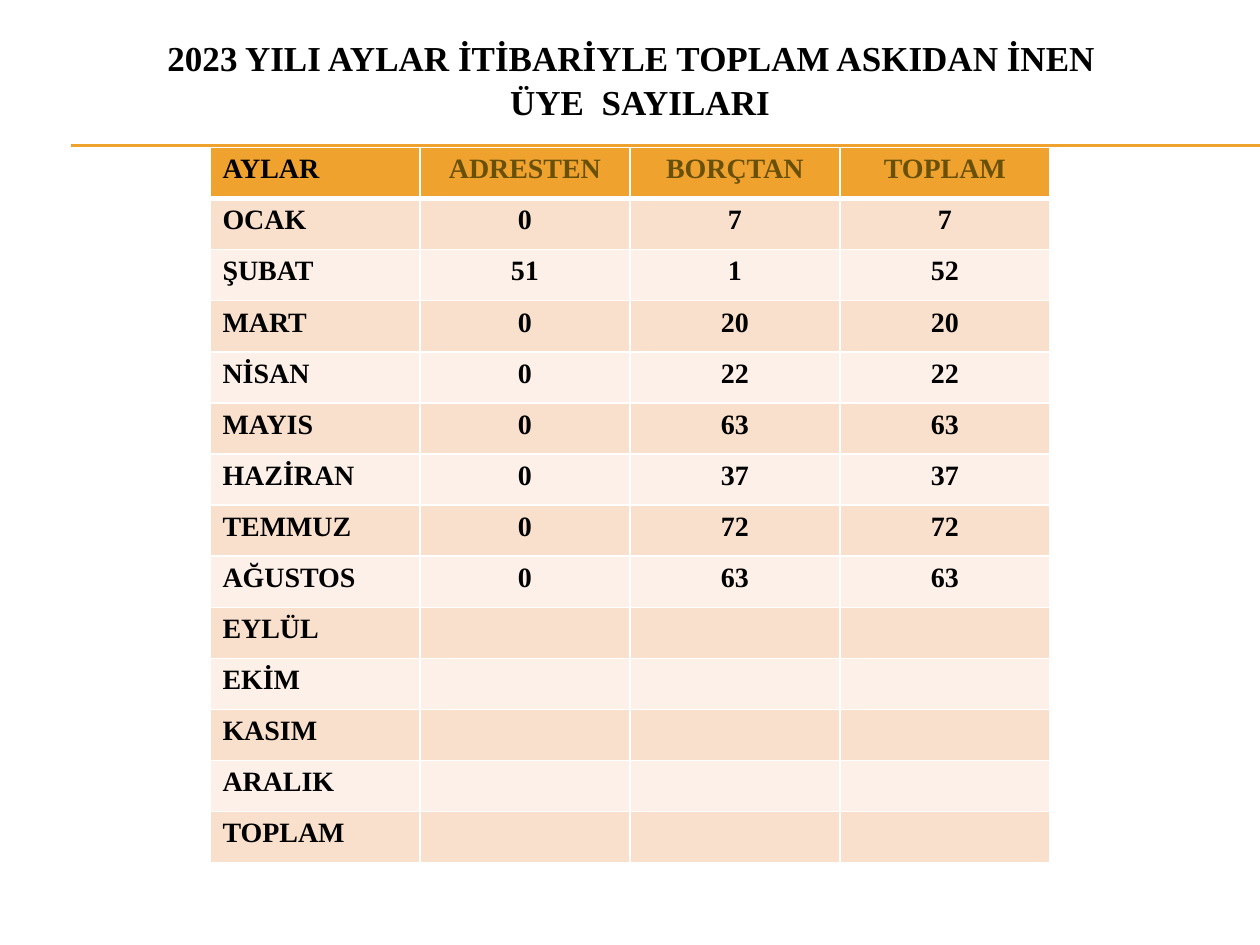
from lxml import etree
from pptx import Presentation
from pptx import util as u
from pptx.dml.color import RGBColor
from pptx.enum import shapes, text
from pptx.oxml.ns import qn

BLACK = RGBColor(0x00, 0x00, 0x00)
WHITE = RGBColor(0xFF, 0xFF, 0xFF)
AMBER = RGBColor(0xF0, 0xA2, 0x2E)
OLIVE = RGBColor(0x69, 0x50, 0x08)
PEACH = RGBColor(0xF9, 0xE0, 0xCD)
CREAM = RGBColor(0xFC, 0xF0, 0xE8)

WIDTH, HEIGHT = 10, 7.5
COLUMN = WIDTH / 6
ROW = 5.68 / 14

HEADINGS = ["AYLAR", "ADRESTEN", "BORÇTAN", "TOPLAM"]
REMOVED = [  # month, by address, by debt
    ("OCAK", 0, 7), ("ŞUBAT", 51, 1), ("MART", 0, 20), ("NİSAN", 0, 22),
    ("MAYIS", 0, 63), ("HAZİRAN", 0, 37), ("TEMMUZ", 0, 72), ("AĞUSTOS", 0, 63),
]
OPEN_ROWS = ["EYLÜL", "EKİM", "KASIM", "ARALIK", "TOPLAM"]


class Page:
    font = "Times New Roman"

    def __init__(self, deck):
        self.slide = deck.slides.add_slide(deck.slide_layouts[6])

    def add_words(self, paragraph, words, size, color, centred):
        paragraph.alignment = text.PP_ALIGN.CENTER if centred else text.PP_ALIGN.LEFT
        for number, line in enumerate(words.split("\n")):
            if number:
                paragraph.add_line_break()
            run = paragraph.add_run()
            run.text = line
            run.font.name, run.font.size, run.font.bold = self.font, u.Pt(size), True
            run.font.color.rgb = color

    def title(self, words, left, top, width, height):
        box = self.slide.shapes.add_textbox(*map(u.Inches, (left, top, width, height)))
        frame = box.text_frame
        frame.word_wrap = True
        frame.vertical_anchor = text.MSO_ANCHOR.MIDDLE
        frame.paragraphs[0].line_spacing = 1.05
        self.add_words(frame.paragraphs[0], words, 20, BLACK, True)

    def rule(self, left, y):
        """Draw a thin line from left to the slide's right edge."""
        line = self.slide.shapes.add_connector(
            shapes.MSO_CONNECTOR.STRAIGHT,
            u.Inches(left), u.Inches(y), u.Inches(WIDTH), u.Inches(y))
        line.line.color.rgb, line.line.width = AMBER, u.Pt(0.75)
        etree.SubElement(line._element.spPr, qn("a:effectLst"))

    def border(self, cell, side, points):
        edge = etree.SubElement(cell._tc.get_or_add_tcPr(), qn("a:ln" + side),
                                w=str(u.Pt(points)))
        fill = etree.SubElement(edge, qn("a:solidFill"))
        etree.SubElement(fill, qn("a:srgbClr"), val=str(WHITE))

    def table(self, rows, left, top):
        count = len(rows[0])
        grid = self.slide.shapes.add_table(
            len(rows), count, u.Inches(left), u.Inches(top),
            u.Inches(count * COLUMN), u.Inches(len(rows) * ROW)).table
        for column in grid.columns:
            column.width = u.Inches(COLUMN)
        for r, values in enumerate(rows):
            grid.rows[r].height = u.Inches(ROW)
            for c, value in enumerate(values):
                self.cell(grid.cell(r, c), r, c, str(value))

    def cell(self, cell, r, c, words):
        # A thick border parts the headings from the months.
        for side in "LRTB":
            self.border(cell, side, 3 if (r, side) in ((0, "B"), (1, "T")) else 1)
        cell.fill.solid()
        cell.fill.fore_color.rgb = AMBER if r == 0 else PEACH if r % 2 else CREAM
        if words:
            color = OLIVE if r == 0 and c else BLACK
            self.add_words(cell.text_frame.paragraphs[0], words, 16, color, c > 0)


def main():
    deck = Presentation()
    deck.slide_width, deck.slide_height = u.Inches(WIDTH), u.Inches(HEIGHT)
    page = Page(deck)
    for y in (1.15, 1.16):
        page.rule(0.56, y)
    months = [(month, address, debt, address + debt) for month, address, debt in REMOVED]
    pending = [(label, "", "", "") for label in OPEN_ROWS]
    page.table([HEADINGS, *months, *pending], COLUMN, 1.17)
    page.title("2023 YILI AYLAR İTİBARİYLE TOPLAM ASKIDAN İNEN  \nÜYE  SAYILARI",
               0.33, 0.16, 9.5, 0.92)
    deck.save("out.pptx")


if __name__ == "__main__":
    main()
